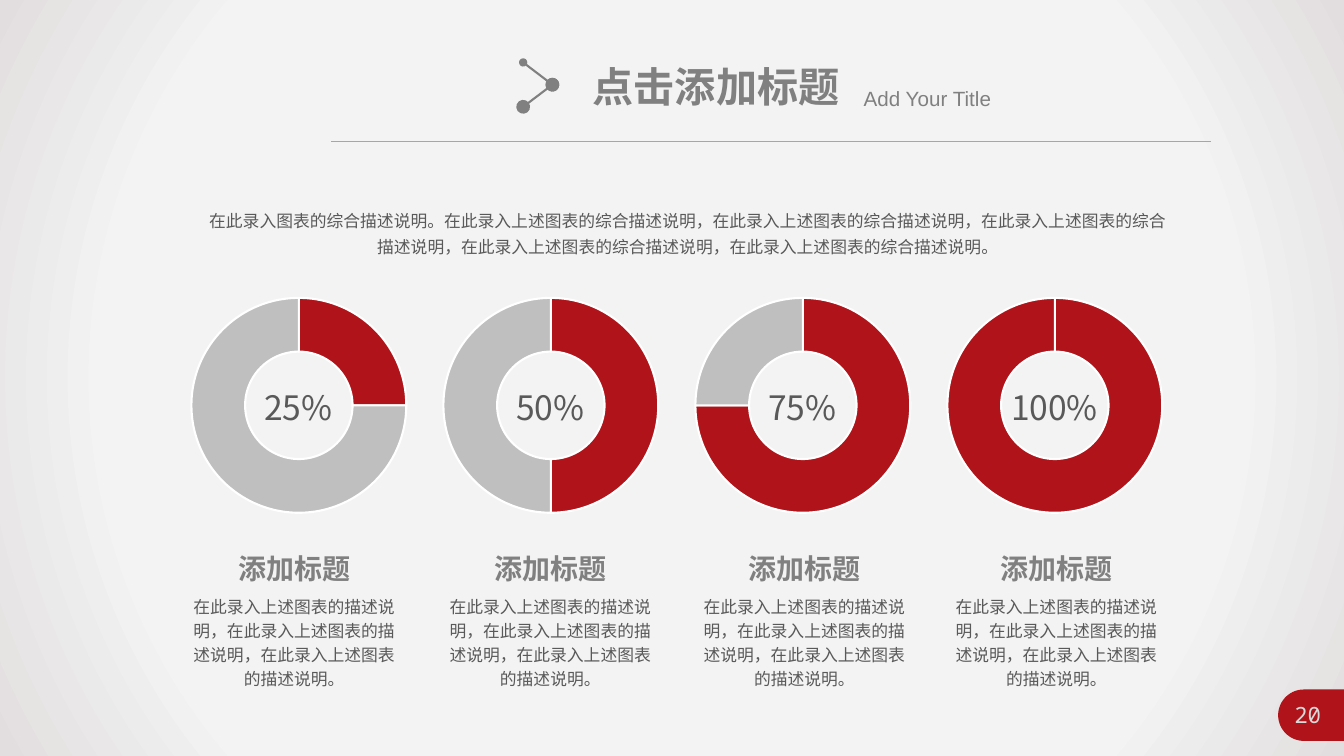
from dataclasses import dataclass
from math import cos, pi, sin

from lxml.etree import SubElement
from pptx import Presentation
from pptx.chart.data import CategoryChartData
from pptx.dml.color import RGBColor
from pptx.enum.chart import XL_CHART_TYPE
from pptx.enum.shapes import MSO_CONNECTOR, MSO_SHAPE
from pptx.enum.text import MSO_AUTO_SIZE, PP_ALIGN
from pptx.oxml import parse_xml
from pptx.oxml.ns import nsdecls, qn
from pptx.util import Pt


@dataclass(frozen=True)
class Theme:
    """Colours, fonts and type sizes of the slide."""
    red: str = "B01319"
    silver: str = "BFBFBF"
    grey: str = "808080"
    text: str = "595959"
    rule: str = "A6A6A6"
    pale: str = "D9D9D9"
    white: str = "FFFFFF"
    black: str = "000000"
    backdrop: tuple = ((0, "F5F5F5"), (73, "F3F3F3"), (100, "E2DEDF"))
    chinese: str = "Noto Sans CJK SC"
    latin: str = "Arial"
    mono: str = "Noto Sans Mono"
    chart: str = "Calibri"
    title: float = 29.4
    subtitle: float = 14.7
    percent: float = 24
    heading: float = 20
    page: float = 16
    body: float = 12
    label: float = 10


class SlideBuilder:
    """Draws themed elements on one slide, with lengths in points."""

    def __init__(self, slide, theme):
        self.slide = slide
        self.shapes = slide.shapes
        self.theme = theme

    def backdrop(self, width, height):
        """Cover the slide with a radial gradient."""
        shape = self.shapes.add_shape(MSO_SHAPE.RECTANGLE, 0, 0, Pt(width), Pt(height))
        shape.shadow.inherit = False
        shape.line.fill.background()
        stops = "".join(
            f'<a:gs pos="{position * 1000}"><a:srgbClr val="{color}"/></a:gs>'
            for position, color in self.theme.backdrop
        )
        gradient = parse_xml(
            f'<a:gradFill {nsdecls("a")} rotWithShape="1"><a:gsLst>{stops}</a:gsLst>'
            '<a:path path="circle"><a:fillToRect l="50000" t="50000" r="50000" b="50000"/>'
            "</a:path></a:gradFill>"
        )
        shape._element.spPr.find(qn("a:prstGeom")).addnext(gradient)

    def line(self, start, end, color, width, head=None, tail=None):
        """Draw a straight line, with round ends of the given sizes."""
        points = [Pt(value) for value in (*start, *end)]
        connector = self.shapes.add_connector(MSO_CONNECTOR.STRAIGHT, *points)
        connector.line.color.rgb = RGBColor.from_string(color)
        connector.line.width = Pt(width)
        properties = connector._element.spPr
        for tag, size in (("a:headEnd", head), ("a:tailEnd", tail)):
            if size:
                SubElement(properties.find(qn("a:ln")), qn(tag), type="oval", w=size, len=size)
        SubElement(properties, qn("a:effectLst"))

    def tab(self, left, top, right, bottom):
        """Draw a tab with a round left side."""
        radius = (bottom - top) / 2
        steps = 36
        angles = [pi * step / steps for step in range(steps + 1)]
        arc = [
            (Pt(left + radius - radius * sin(angle)), Pt(top + radius - radius * cos(angle)))
            for angle in angles
        ]
        builder = self.shapes.build_freeform(Pt(right), Pt(top))
        builder.add_line_segments([*arc, (Pt(right), Pt(bottom))], close=True)
        shape = builder.convert_to_shape()
        shape.shadow.inherit = False
        shape.fill.solid()
        shape.fill.fore_color.rgb = RGBColor.from_string(self.theme.red)
        shape.line.fill.background()

    def text(self, text, box, size, color, font=None, bold=False, wrap=True,
             align=PP_ALIGN.CENTER, spacing=None):
        """Write one paragraph in a text box."""
        frame = self.shapes.add_textbox(*[Pt(value) for value in box]).text_frame
        frame.text = text
        frame.word_wrap = wrap
        frame.auto_size = MSO_AUTO_SIZE.SHAPE_TO_FIT_TEXT
        paragraph = frame.paragraphs[0]
        paragraph.alignment = align
        paragraph.line_spacing = spacing
        run = paragraph.runs[0]
        run.font.size = Pt(size)
        run.font.bold = bold
        run.font.color.rgb = RGBColor.from_string(color)
        run.font.name = font or self.theme.chinese
        SubElement(run._r.get_or_add_rPr(), qn("a:ea"), typeface=self.theme.chinese)

    def doughnut(self, percent, box):
        """Draw a doughnut chart of a share and its remainder."""
        theme = self.theme
        data = CategoryChartData()
        data.categories = ["1", "2"]
        data.add_series("Series 1", (percent, 100 - percent))
        frame = self.shapes.add_chart(
            XL_CHART_TYPE.DOUGHNUT, *[Pt(value) for value in box], data)
        chart = frame.chart
        chart.has_title = False
        chart.has_legend = False
        chart.font.name = theme.chart
        chart.font.size = Pt(theme.label)
        chart.font.color.rgb = RGBColor.from_string(theme.black)
        plot = chart.plots[0]
        plot.vary_by_categories = True
        plot._element.find(qn("c:holeSize")).set("val", "75")
        rest = theme.silver if percent < 100 else theme.red
        for index, color in enumerate((theme.red, rest)):
            slice_format = plot.series[0].points[index].format
            slice_format.fill.solid()
            slice_format.fill.fore_color.rgb = RGBColor.from_string(color)
            slice_format.line.color.rgb = RGBColor.from_string(theme.white)
            slice_format.line.width = Pt(1.5)
        area = chart._chartSpace.chart.plotArea
        for layout in area.findall(qn("c:layout")):
            area.remove(layout)
        area.insert(0, parse_xml(
            f'<c:layout {nsdecls("c")}><c:manualLayout><c:layoutTarget val="inner"/>'
            '<c:xMode val="edge"/><c:yMode val="edge"/><c:x val="0.06"/><c:y val="0.08"/>'
            '<c:w val="0.88"/><c:h val="0.83"/></c:manualLayout></c:layout>'
        ))


def main():
    """Build and save the slide."""
    theme = Theme()
    presentation = Presentation()
    presentation.slide_width = Pt(960)
    presentation.slide_height = Pt(540)
    slide = presentation.slides.add_slide(presentation.slide_layouts[6])
    builder = SlideBuilder(slide, theme)

    builder.backdrop(960, 540)
    builder.line((236.5, 101), (865, 101), theme.rule, 0.5)
    builder.tab(913, 492.5, 960, 529.2)
    builder.text("20", (910.4, 497.5, 47.5, 26.6), theme.page, theme.pale, theme.mono)

    joint = (394.6, 60.5)
    builder.line((373.7, 44.6), joint, theme.grey, 1.5, "med", "lg")
    builder.line(joint, (373.7, 76.3), theme.grey, 1.5, "lg", "lg")
    builder.text("点击添加标题", (416.2, 40.3, 192.2, 42.5), theme.title, theme.grey,
                 theme.latin, bold=True, wrap=False, align=PP_ALIGN.LEFT)
    builder.text("Add Your Title", (609.8, 57.6, 181.4, 25.2), theme.subtitle, theme.grey,
                 theme.latin, align=PP_ALIGN.LEFT)

    summary = "在此录入上述图表的综合描述说明"
    builder.text("在此录入图表的综合描述说明。" + "，".join([summary] * 5) + "。",
                 (140.4, 142.6, 702, 45.4), theme.body, theme.text, spacing=1.3)

    description = "，".join(["在此录入上述图表的描述说明"] * 3) + "。"
    columns = ((25, 210.2), (50, 393.1), (75, 574.6), (100, 754.6))
    for index, (percent, center) in enumerate(columns):
        left = 126 + 180 * index
        builder.doughnut(percent, (left, 198, 175, 185))
        builder.text(f"{percent}%", (left + 26, 272.9, 122.4, 36), theme.percent, theme.text)
        builder.text("添加标题", (center - 47.5, 390.2, 95, 31.7), theme.heading, theme.grey,
                     bold=True, wrap=False)
        builder.text(description, (center - 79.2, 419.8, 158.4, 77), theme.body, theme.text,
                     spacing=1.2)

    presentation.save("out.pptx")


if __name__ == "__main__":
    main()
